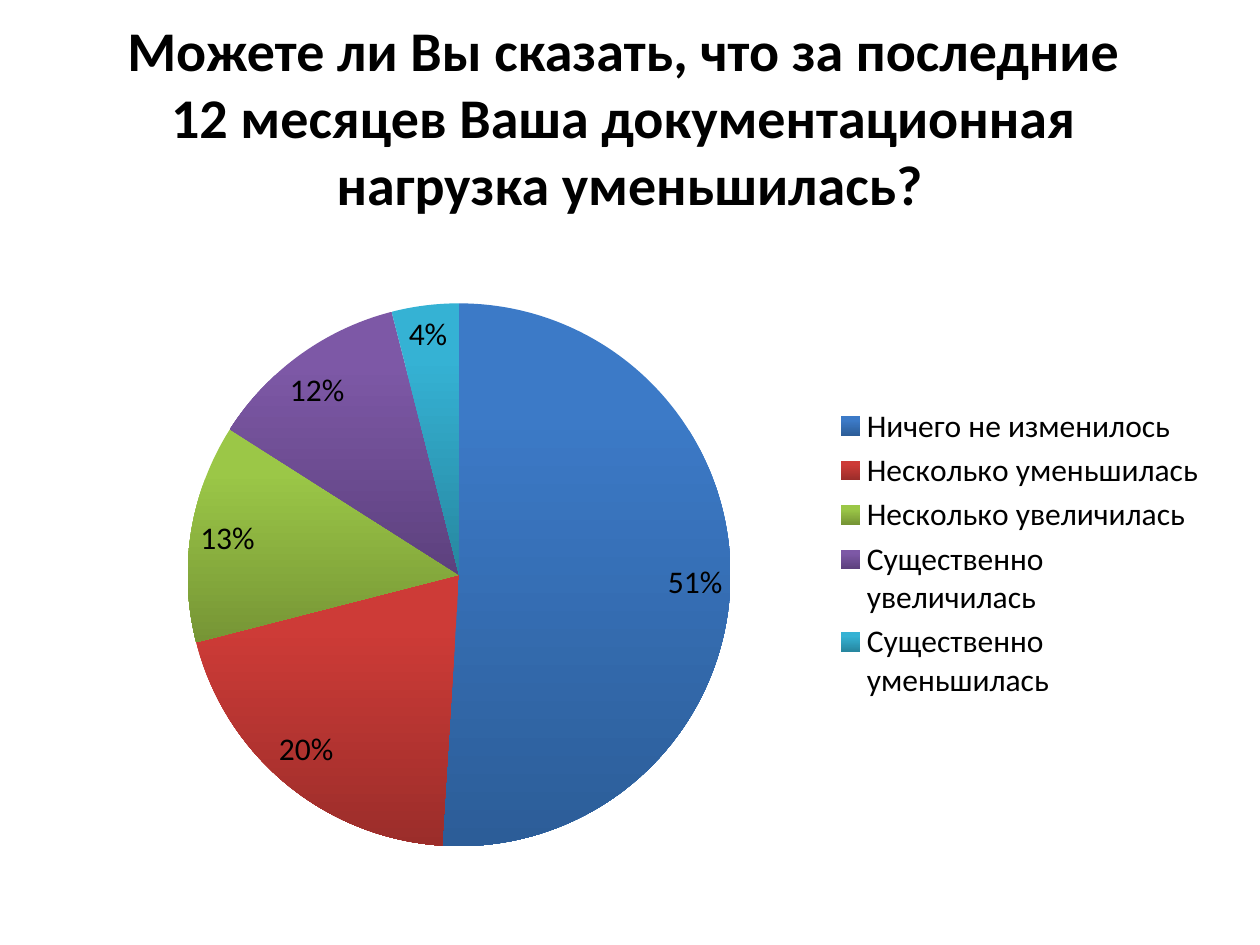
import pptx
import pptx.chart.data
import pptx.dml.color
import pptx.enum.chart
import pptx.enum.text
import pptx.oxml
import pptx.oxml.ns
import pptx.util

PX = 914400 // 126
COLORS = {"text": "000000", "background": "FFFFFF"}
GRADIENTS = {
    "blue": ("3C7AC7", "2C5D98"),
    "red": ("CD3B37", "9B2D2A"),
    "green": ("9BC747", "769535"),
    "purple": ("7D58A6", "5D417E"),
    "teal": ("35B2D4", "2787A0"),
}
TITLE = [
    "Можете ли Вы сказать, что за последние ",
    "12 месяцев Ваша документационная ",
    "нагрузка уменьшилась?",
]
ANSWERS = {
    "Ничего не изменилось": 51,
    "Несколько уменьшилась": 20,
    "Несколько увеличилась": 13,
    "Существенно увеличилась": 12,
    "Существенно уменьшилась": 4,
}


def rgb(value):
    """Turn a hex string into a colour."""
    return pptx.dml.color.RGBColor.from_string(value)


def apply(target, values):
    """Set every named attribute on the target."""
    for name, value in values.items():
        setattr(target, name, value)


class Deck:
    """Hold the style and the current slide."""

    def __init__(self, prs):
        """Add a title-only slide with a plain background."""
        self.s = prs.slides.add_slide(prs.slide_layouts[5])
        fill = self.s.background.fill
        fill.solid()
        fill.fore_color.rgb = rgb(COLORS["background"])

    def font(self, font, size, bold=False):
        """Format a font in the deck style."""
        apply(font, {"name": "Calibri", "size": pptx.util.Pt(size), "bold": bold})
        font.color.rgb = rgb(COLORS["text"])

    def box(self, x, y, w, h):
        """Scale a px box into EMU."""
        return [pptx.util.Emu(v * PX) for v in (x, y, w, h)]

    def title(self, lines, *box):
        """Fill and place the title."""
        sp = self.s.shapes.title
        apply(sp, dict(zip(("left", "top", "width", "height"), self.box(*box))))
        tf = sp.text_frame
        apply(tf, {"word_wrap": True,
                   "auto_size": pptx.enum.text.MSO_AUTO_SIZE.NONE,
                   "vertical_anchor": pptx.enum.text.MSO_ANCHOR.MIDDLE})
        p = tf.paragraphs[0]
        p.alignment = pptx.enum.text.PP_ALIGN.CENTER
        for i, line in enumerate(lines):
            if i:
                p.add_line_break()
            r = p.add_run()
            r.text = line
            self.font(r.font, 32, True)

    def plot_layout(self, chart, x, y, w, h):
        """Place the plot area as fractions of the chart."""
        area = chart.element.find(".//" + pptx.oxml.ns.qn("c:plotArea"))
        for old in area.findall(pptx.oxml.ns.qn("c:layout")):
            area.remove(old)
        sizes = "".join(f'<c:{k} val="{v}"/>' for k, v in zip("xywh", (x, y, w, h)))
        area.insert(0, pptx.oxml.parse_xml(
            f'<c:layout {pptx.oxml.ns.nsdecls("c")}><c:manualLayout>'
            '<c:layoutTarget val="inner"/><c:xMode val="edge"/><c:yMode val="edge"/>'
            f"{sizes}</c:manualLayout></c:layout>"))

    def pie(self, answers, *box):
        """Add a pie chart with percent labels and a legend."""
        data = pptx.chart.data.CategoryChartData()
        data.categories = list(answers)
        data.add_series("Series 1", list(answers.values()))
        chart = self.s.shapes.add_chart(
            pptx.enum.chart.XL_CHART_TYPE.PIE, *self.box(*box), data).chart
        apply(chart, {"has_title": False, "has_legend": True})
        self.font(chart.font, 18)
        apply(chart.legend, {"include_in_layout": False,
                             "position": pptx.enum.chart.XL_LEGEND_POSITION.RIGHT})
        self.font(chart.legend.font, 18)
        plot = chart.plots[0]
        apply(plot, {"vary_by_categories": True, "has_data_labels": True})
        labels = plot.data_labels
        apply(labels, {"show_percentage": True, "show_value": False,
                       "number_format": "0%", "number_format_is_linked": False,
                       "position": pptx.enum.chart.XL_LABEL_POSITION.BEST_FIT})
        self.font(labels.font, 18)
        for i, shades in enumerate(GRADIENTS.values()):
            fmt = plot.series[0].points[i].format
            fmt.line.fill.background()
            fmt.fill.gradient()
            fmt.fill.gradient_angle = 270
            for stop, shade, position in zip(fmt.fill.gradient_stops, shades, (0.2, 1)):
                stop.color.rgb = rgb(shade)
                stop.position = position
        self.plot_layout(chart, 0.09, 0.1, 0.48, 0.87)


def main():
    """Build the survey slide."""
    prs = pptx.Presentation()
    apply(prs, {"slide_width": pptx.util.Inches(10),
                "slide_height": pptx.util.Inches(7.5)})
    deck = Deck(prs)
    deck.title(TITLE, 0, 37, 1260, 158)
    deck.pie(ANSWERS, 85, 241, 1134, 624)
    prs.save("out.pptx")


if __name__ == "__main__":
    main()
